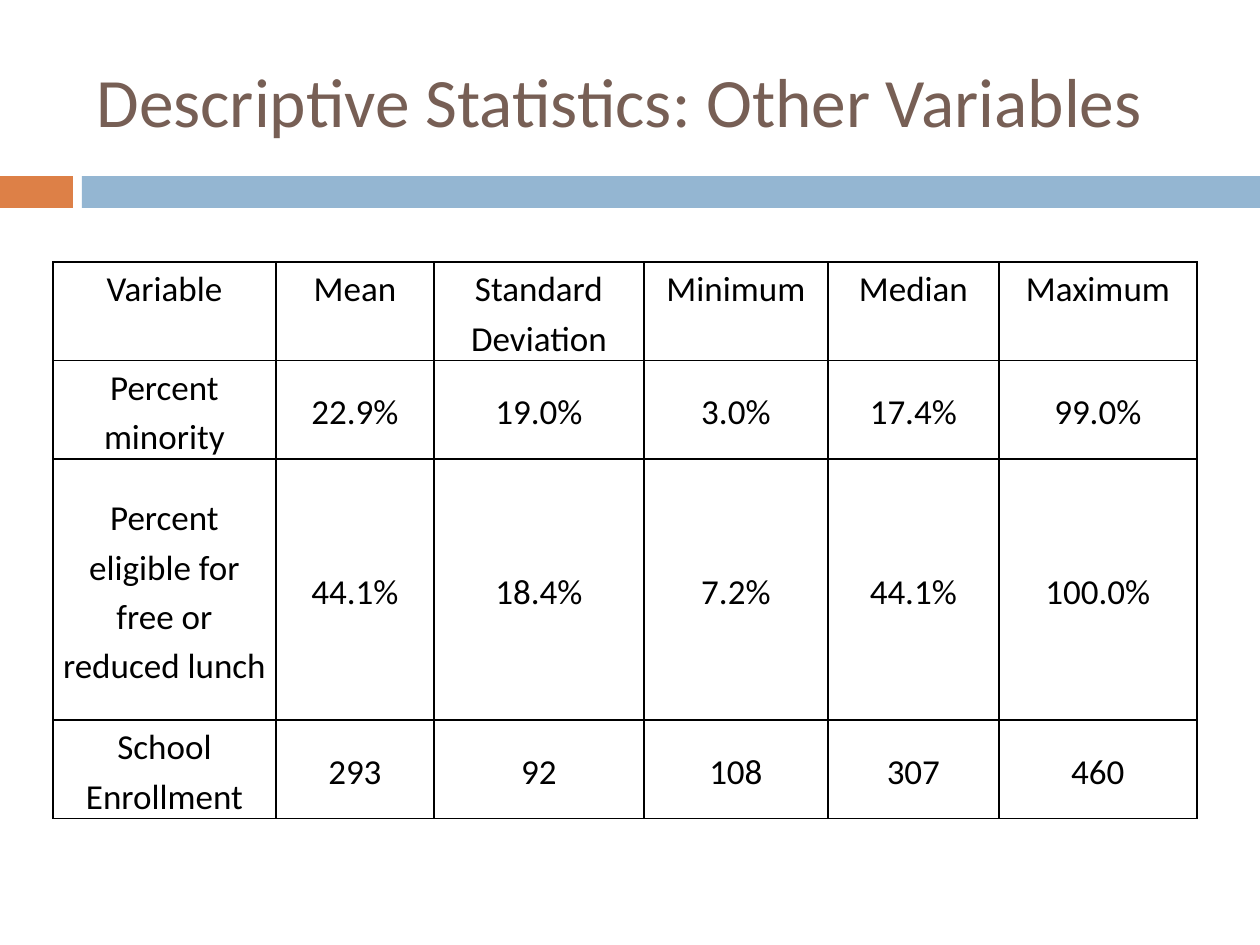
from lxml import etree
from pptx import Presentation
from pptx.dml.color import RGBColor
from pptx.enum.shapes import MSO_SHAPE
from pptx.enum.text import MSO_ANCHOR, MSO_AUTO_SIZE, PP_ALIGN
from pptx.oxml.ns import qn
from pptx.util import Pt

PX = 914400 // 126
RECTANGLE = MSO_SHAPE.RECTANGLE
TOP, MIDDLE = MSO_ANCHOR.TOP, MSO_ANCHOR.MIDDLE
LEFT, CENTER = PP_ALIGN.LEFT, PP_ALIGN.CENTER

ORANGE = RGBColor(0xDD, 0x80, 0x47)
BLUE = RGBColor(0x94, 0xB6, 0xD2)
BROWN = RGBColor(0x77, 0x5F, 0x55)
BLACK = RGBColor(0, 0, 0)


def write_text(text_frame, text, size, color, align=CENTER, line_spacing=None):
    paragraph = text_frame.paragraphs[0]
    paragraph.alignment = align
    paragraph.line_spacing = line_spacing
    run = paragraph.add_run()
    run.text = text
    run.font.name = "Calibri"
    run.font.size = Pt(size)
    run.font.color.rgb = color


def add_borders(cell, color, width):
    properties = cell._tc.get_or_add_tcPr()
    for side in ("lnL", "lnR", "lnT", "lnB"):
        line = etree.SubElement(properties, qn("a:" + side), w=str(Pt(width)))
        fill = etree.SubElement(line, qn("a:solidFill"))
        etree.SubElement(fill, qn("a:srgbClr"), val=str(color))


presentation = Presentation()
presentation.slide_width = 1260 * PX
presentation.slide_height = 945 * PX
slide = presentation.slides.add_slide(presentation.slide_layouts[5])

# Title
title = slide.shapes.title
title.left, title.top, title.width, title.height = 84 * PX, 32 * PX, 1124 * PX, 136 * PX
title.text_frame.auto_size = MSO_AUTO_SIZE.NONE
title.text_frame.vertical_anchor = MIDDLE
write_text(title.text_frame, "Descriptive Statistics: Other Variables",
           size=39.6, color=BROWN, align=LEFT)

# Two-colour band under the title
for left, width, color in ((0, 73, ORANGE), (82, 1178, BLUE)):
    band = slide.shapes.add_shape(RECTANGLE, left * PX, 176 * PX, width * PX, 32 * PX)
    band.shadow.inherit = False
    band.fill.solid()
    band.fill.fore_color.rgb = color
    band.line.fill.background()

# Statistics table
STATISTICS = [
    ("Variable", "Mean", "Standard Deviation", "Minimum", "Median", "Maximum"),
    ("Percent minority", "22.9%", "19.0%", "3.0%", "17.4%", "99.0%"),
    ("Percent eligible for free or reduced lunch",
     "44.1%", "18.4%", "7.2%", "44.1%", "100.0%"),
    ("School Enrollment", "293", "92", "108", "307", "460"),
]
COLUMN_WIDTHS = (223, 158, 210, 184, 171, 198)
ROW_HEIGHTS = (98, 98, 261, 98)

table = slide.shapes.add_table(
    len(ROW_HEIGHTS), len(COLUMN_WIDTHS), 53 * PX, 262 * PX,
    sum(COLUMN_WIDTHS) * PX, sum(ROW_HEIGHTS) * PX).table
table.first_row = False
table.horz_banding = False
for column, width in zip(table.columns, COLUMN_WIDTHS):
    column.width = width * PX
for row, height in zip(table.rows, ROW_HEIGHTS):
    row.height = height * PX

for row_index, values in enumerate(STATISTICS):
    for column_index, value in enumerate(values):
        cell = table.cell(row_index, column_index)
        add_borders(cell, BLACK, width=1)
        cell.fill.background()
        cell.margin_left = cell.margin_right = 9 * PX
        cell.margin_top = cell.margin_bottom = 0
        cell.vertical_anchor = TOP if row_index == 0 else MIDDLE
        write_text(cell.text_frame, value, size=20, color=BLACK, line_spacing=1.15)

presentation.save("out.pptx")
